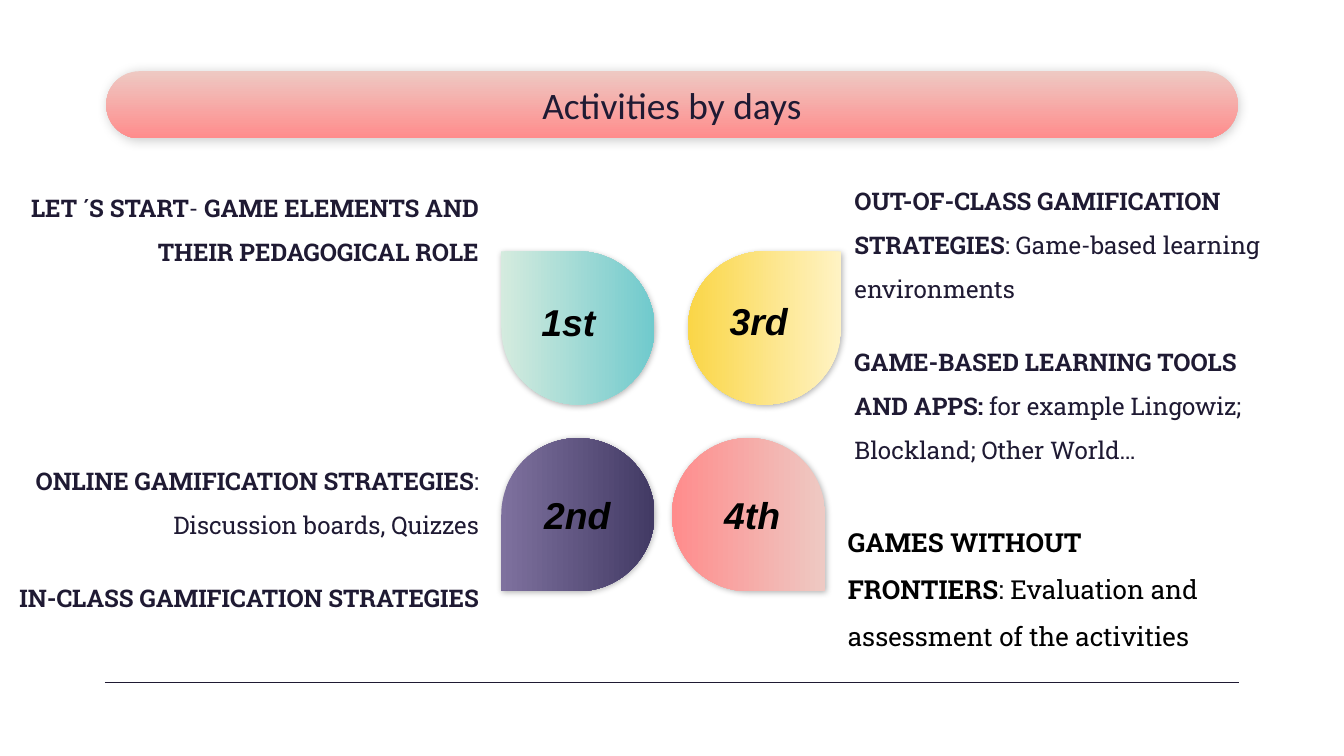
from dataclasses import dataclass

from lxml import etree
from pptx import Presentation
from pptx.dml.color import RGBColor
from pptx.enum import shapes, text
from pptx.oxml import ns
from pptx.util import Inches, Pt


@dataclass(frozen=True)
class Theme:
    ink: str = "1F1A33"
    black: str = "000000"
    coral: tuple = ("EEC9C3", "FF8C8C")
    teal: tuple = ("D4EBDE", "70CACD")
    yellow: tuple = ("FFF3C4", "FAD647")
    purple: tuple = ("7E719E", "423A64")
    title_font: str = "Calibri"
    body_font: str = "Roboto Slab"
    day_font: str = "Arial"
    heading_size: int = 20
    body_size: int = 13
    closing_size: int = 14


THEME = Theme()
LEFT, CENTER, RIGHT = text.PP_ALIGN.LEFT, text.PP_ALIGN.CENTER, text.PP_ALIGN.RIGHT


def add_text(page, area, paragraphs, font=THEME.body_font, size=THEME.body_size,
             color=THEME.ink, align=LEFT, italic=False, spacing=1.0, after=0,
             inset=0.1, middle=False):
    box = page.shapes.add_textbox(*map(Inches, area))
    frame = box.text_frame
    frame.word_wrap = True
    frame.margin_top = frame.margin_bottom = Inches(inset)
    frame.vertical_anchor = text.MSO_ANCHOR.MIDDLE if middle else text.MSO_ANCHOR.TOP
    for index, spans in enumerate(paragraphs):
        para = frame.paragraphs[0] if index == 0 else frame.add_paragraph()
        para.alignment = align
        para.line_spacing = spacing
        para.space_after = Pt(after)
        for words, bold in spans:
            span = para.add_run()
            span.text = words
            span.font.name = font
            span.font.size = Pt(size)
            span.font.bold = bold
            span.font.italic = italic
            span.font.color.rgb = RGBColor.from_string(color)


def add_gradient_shape(page, kind, area, colors, opacity, blur):
    shape = page.shapes.add_shape(kind, *map(Inches, area))
    shape.fill.gradient()
    shape.fill.gradient_angle = 270
    for stop, color in zip(shape.fill.gradient_stops, colors):
        stop.color.rgb = RGBColor.from_string(color)
    shape.line.fill.background()
    shape.shadow.inherit = False
    effects = shape._element.spPr.find(ns.qn("a:effectLst"))
    shadow = etree.SubElement(effects, ns.qn("a:outerShdw"), blurRad=str(Pt(blur)),
                              dist=str(Pt(0.8)), dir=str(66 * 60000),
                              algn="bl", rotWithShape="0")
    tint = etree.SubElement(shadow, ns.qn("a:srgbClr"), val=THEME.black)
    etree.SubElement(tint, ns.qn("a:alpha"), val=str(opacity * 1000))
    return shape


def add_title(page, area, words):
    banner = add_gradient_shape(page, shapes.MSO_SHAPE.ROUNDED_RECTANGLE, area,
                                THEME.coral, opacity=20, blur=5.6)
    banner.adjustments[0] = 0.5
    left, top, width, height = area
    add_text(page, (left + 1.68, top, width - 3.36, height), [[(words, False)]],
             font=THEME.title_font, size=THEME.heading_size, align=CENTER, middle=True)


def add_footer_line(page, left, right, top):
    line = page.shapes.add_connector(shapes.MSO_CONNECTOR.STRAIGHT,
                                     *map(Inches, (left, top, right, top)))
    line.line.color.rgb = RGBColor.from_string(THEME.ink)
    line.line.width = Pt(0.75)
    etree.SubElement(line._element.spPr, ns.qn("a:effectLst"))


def add_day(page, left, top, label, colors, rotation, flipped, label_offset):
    petal = add_gradient_shape(page, shapes.MSO_SHAPE.TEAR, (left, top, 1.14, 1.14),
                               colors, opacity=30, blur=3.4)
    petal.rotation = rotation
    if flipped:
        petal._element.spPr.find(ns.qn("a:xfrm")).set("flipH", "1")
    across, down = label_offset
    add_text(page, (left + across, top + down, 0.81, 0.44), [[(label, True)]],
             font=THEME.day_font, size=THEME.heading_size, color=THEME.black,
             italic=True, inset=0.05)


def add_petals(page, left, top):
    lower = top + 1.39
    add_day(page, left, top, "1st", THEME.teal, 270, False, (0.2, 0.31))
    add_day(page, left + 1.39, top, "3rd", THEME.yellow, 90, True, (0.21, 0.3))
    add_day(page, left + 1.27, lower, "4th", THEME.coral, 90, False, (0.29, 0.35))
    add_day(page, left, lower, "2nd", THEME.purple, 270, True, (0.22, 0.35))


def add_activities(page):
    body = dict(spacing=1.5, after=16)
    add_text(page, (-0.15, 1.23, 3.81, 1.58), [
        [("LET ́S START", True), ("- ", False),
         ("GAME ELEMENTS AND THEIR PEDAGOGICAL ROLE", True)],
    ], align=RIGHT, **body)
    add_text(page, (-0.15, 3.26, 3.81, 2.04), [
        [("ONLINE GAMIFICATION STRATEGIES", True),
         (": Discussion boards, Quizzes", False)],
        [("IN-CLASS GAMIFICATION STRATEGIES", True)],
    ], align=RIGHT, **body)
    add_text(page, (6.26, 1.18, 3.46, 2.42), [
        [("OUT-OF-CLASS GAMIFICATION STRATEGIES", True),
         (": Game-based learning environments", False)],
        [("GAME-BASED LEARNING TOOLS AND APPS:", True),
         (" for example Lingowiz; Blockland; Other World…", False)],
    ], **body)
    add_text(page, (6.21, 3.75, 2.9, 1.12), [
        [("GAMES WITHOUT FRONTIERS", True),
         (": Evaluation and assessment of the activities", False)],
    ], size=THEME.closing_size, color=THEME.black, spacing=1.5, inset=0.05)


def main():
    deck = Presentation()
    deck.slide_width = Inches(10)
    deck.slide_height = deck.slide_width * 9 // 16
    page = deck.slides.add_slide(deck.slide_layouts[6])
    add_title(page, (0.79, 0.53, 8.42, 0.5), "Activities by days")
    add_footer_line(page, 0.78, 9.22, 5.08)
    add_petals(page, 3.73, 1.87)
    add_activities(page)
    deck.save("out.pptx")


if __name__ == "__main__":
    main()
